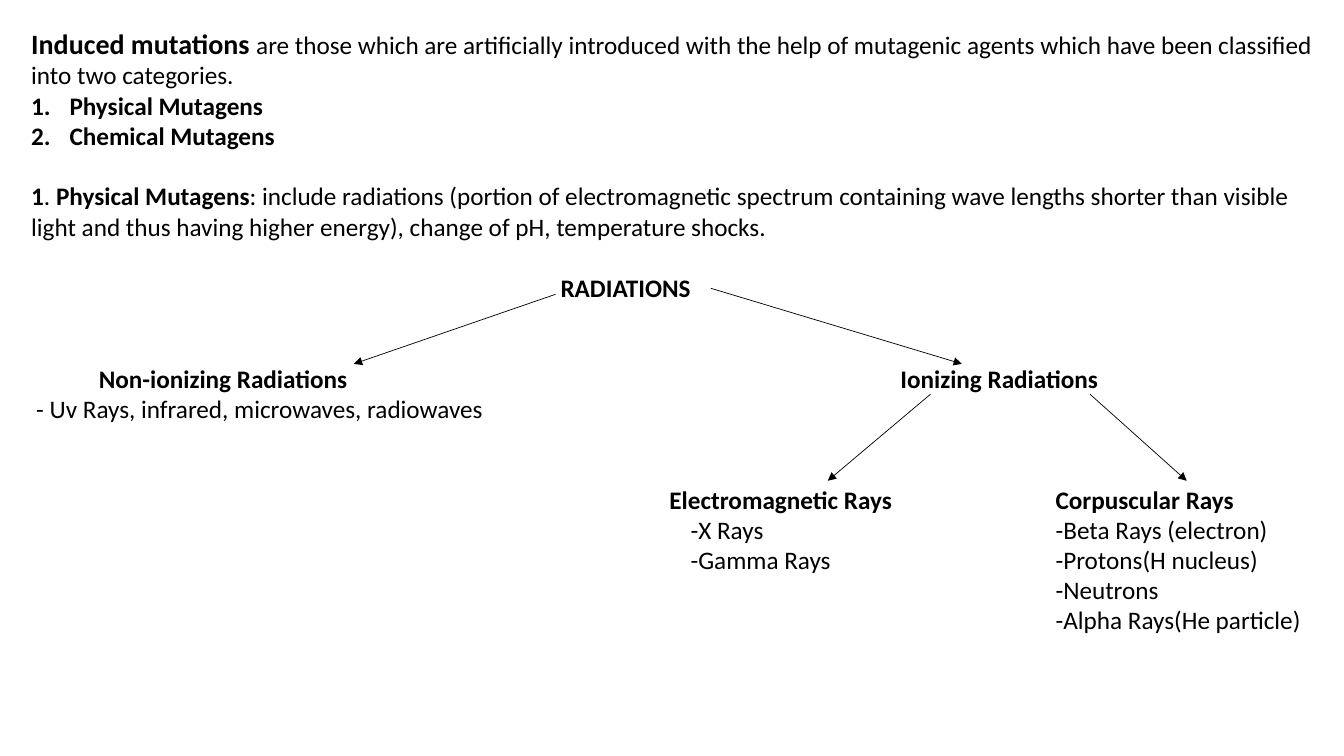
from lxml import etree
from pptx import Presentation
from pptx import util as u
from pptx.dml.color import RGBColor
from pptx.enum import shapes, text
from pptx.oxml.ns import qn

BLACK = RGBColor(0x00, 0x00, 0x00)
LINE = 0.3  # height of one text line, inches


class MutagenSlide:
    font, size = "Calibri", 18

    def __init__(self, prs):
        self.s = prs.slides.add_slide(prs.slide_layouts[6])

    def box(self, left, top, width, lines):
        """Text box without insets, tall enough for the given line count."""
        sp = self.s.shapes.add_textbox(u.Inches(left), u.Inches(top),
                                       u.Inches(width), u.Inches(lines * LINE))
        tf = sp.text_frame
        tf.word_wrap = True
        tf.auto_size = text.MSO_AUTO_SIZE.NONE
        tf.margin_left = tf.margin_right = tf.margin_top = tf.margin_bottom = 0
        return tf

    def para(self, tf, runs, indent=0, gap=0, numbered=False):
        """Paragraph from (words, bold[, size]) runs."""
        p = tf.paragraphs[0]
        if p.runs:
            p = tf.add_paragraph()
        p.space_before = u.Pt(gap)
        pPr = p._p.get_or_add_pPr()
        pPr.set("marL", str(u.Inches(indent)))
        if numbered:
            pPr.set("indent", str(-u.Inches(indent)))
            etree.SubElement(pPr, qn("a:buFont"), typeface="+mj-lt")
            etree.SubElement(pPr, qn("a:buAutoNum"), type="arabicPeriod")
        for words, bold, *size in runs:
            r = p.add_run()
            r.text = words
            r.font.name = self.font
            r.font.size = u.Pt(size[0] if size else self.size)
            r.font.bold = bold
            r.font.color.rgb = BLACK

    def node(self, left, top, width, heading, items=(), head_indent=0, item_indent=0):
        """Bold heading of the tree with its plain items below."""
        tf = self.box(left, top, width, 1 + len(items))
        self.para(tf, [(heading, True)], head_indent)
        for item in items:
            self.para(tf, [(item, False)], item_indent)

    def arrow(self, x1, y1, x2, y2):
        c = self.s.shapes.add_connector(shapes.MSO_CONNECTOR.STRAIGHT,
                                        *map(u.Inches, (x1, y1, x2, y2)))
        c.line.color.rgb = BLACK
        c.line.width = u.Pt(0.5)
        etree.SubElement(c.line._get_or_add_ln(), qn("a:tailEnd"), type="triangle")
        etree.SubElement(c._element.spPr, qn("a:effectLst"))


def main():
    prs = Presentation()
    prs.slide_width, prs.slide_height = u.Inches(13.33), u.Inches(7.5)
    slide = MutagenSlide(prs)

    # Definitions
    tf = slide.box(0.31, 0.26, 12.8, 7.2)
    slide.para(tf, [
        ("Induced mutations ", True, 20),
        ("are those which are artificially introduced with the help of mutagenic "
         "agents which have been classified into two categories.", False)])
    for category in ("Physical Mutagens", "Chemical Mutagens"):
        slide.para(tf, [(category, True)], indent=0.38, numbered=True)
    slide.para(tf, [
        ("1", True), (". ", False), ("Physical Mutagens", True),
        (": include radiations (portion of electromagnetic spectrum containing wave "
         "lengths shorter than visible light and thus having higher energy), change "
         "of pH, temperature shocks.", False)], gap=21.6)

    # Radiation tree
    slide.node(5.56, 2.7, 1.45, "RADIATIONS")
    slide.node(0.36, 3.6, 4.8, "Non-ionizing Radiations",
               ["- Uv Rays, infrared, microwaves, radiowaves"], head_indent=0.62)
    slide.node(8.93, 3.6, 2.2, "Ionizing Radiations")
    slide.node(6.64, 4.8, 2.5, "Electromagnetic Rays",
               ["-X Rays", "-Gamma Rays"], item_indent=0.21)
    slide.node(10.47, 4.8, 2.7, "Corpuscular Rays",
               ["-Beta Rays (electron)", "-Protons(H nucleus)", "-Neutrons",
                "-Alpha Rays(He particle)"])

    # Branches
    for ends in ((5.51, 2.92, 3.51, 3.61), (7.05, 2.86, 9.54, 3.61),
                 (9.23, 3.91, 8.21, 4.77), (10.81, 3.91, 11.77, 4.77)):
        slide.arrow(*ends)

    prs.save("out.pptx")


if __name__ == "__main__":
    main()
